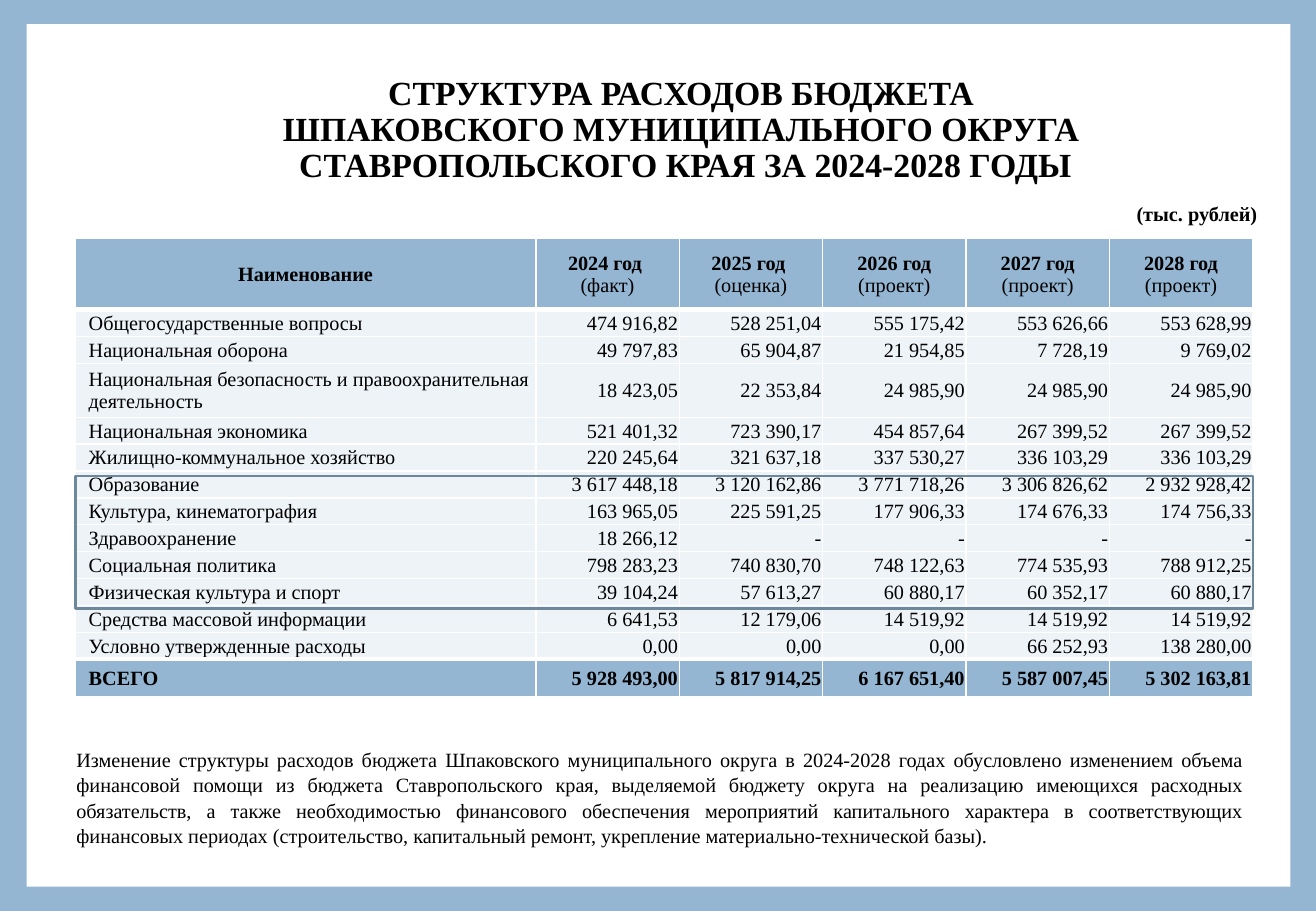
from lxml import etree
from pptx import Presentation
from pptx.dml.color import RGBColor
from pptx.enum.shapes import MSO_SHAPE
from pptx.enum.text import MSO_ANCHOR, PP_ALIGN
from pptx.oxml.ns import qn
from pptx.util import Inches, Pt

RECT = MSO_SHAPE.RECTANGLE
MIDDLE, TOP = MSO_ANCHOR.MIDDLE, MSO_ANCHOR.TOP
LEFT, CENTER, RIGHT, JUST = (PP_ALIGN.LEFT, PP_ALIGN.CENTER,
                             PP_ALIGN.RIGHT, PP_ALIGN.JUSTIFY)

# Content
TITLE = ["СТРУКТУРА РАСХОДОВ БЮДЖЕТА ",
         "ШПАКОВСКОГО МУНИЦИПАЛЬНОГО ОКРУГА ",
         "СТАВРОПОЛЬСКОГО КРАЯ ЗА 2024-2028 ГОДЫ"]
UNITS = "(тыс. рублей)"
HEAD = ["Наименование", "2024 год \n(факт)", "2025 год \n(оценка)",
        "2026 год\n(проект)", "2027 год\n(проект)", "2028 год\n(проект)"]
BODY = [
    ("Общегосударственные вопросы", "474 916,82", "528 251,04",
     "555 175,42", "553 626,66", "553 628,99"),
    ("Национальная оборона", "49 797,83", "65 904,87",
     "21 954,85", "7 728,19", "9 769,02"),
    ("Национальная безопасность и правоохранительная деятельность",
     "18 423,05", "22 353,84", "24 985,90", "24 985,90", "24 985,90"),
    ("Национальная экономика", "521 401,32", "723 390,17",
     "454 857,64", "267 399,52", "267 399,52"),
    ("Жилищно-коммунальное хозяйство", "220 245,64", "321 637,18",
     "337 530,27", "336 103,29", "336 103,29"),
    ("Образование", "3 617 448,18", "3 120 162,86",
     "3 771 718,26", "3 306 826,62", "2 932 928,42"),
    ("Культура, кинематография", "163 965,05", "225 591,25",
     "177 906,33", "174 676,33", "174 756,33"),
    ("Здравоохранение", "18 266,12", "-", "-", "-", "-"),
    ("Социальная политика", "798 283,23", "740 830,70",
     "748 122,63", "774 535,93", "788 912,25"),
    ("Физическая культура и спорт", "39 104,24", "57 613,27",
     "60 880,17", "60 352,17", "60 880,17"),
    ("Средства массовой информации", "6 641,53", "12 179,06",
     "14 519,92", "14 519,92", "14 519,92"),
    ("Условно утвержденные расходы", "0,00", "0,00",
     "0,00", "66 252,93", "138 280,00"),
]
TOTAL = ("ВСЕГО", "5 928 493,00", "5 817 914,25",
         "6 167 651,40", "5 587 007,45", "5 302 163,81")
NOTE = ("Изменение структуры расходов бюджета Шпаковского муниципального "
        "округа в 2024-2028 годах обусловлено изменением объема финансовой "
        "помощи из бюджета Ставропольского края, выделяемой бюджету округа "
        "на реализацию имеющихся расходных обязательств, а также "
        "необходимостью финансового обеспечения мероприятий капитального "
        "характера в соответствующих финансовых периодах (строительство, "
        "капитальный ремонт, укрепление материально-технической базы).")

# Style and layout
FONT = "Times New Roman"
COLORS = {"blue": "94B6D2", "pale": "EEF3F7", "white": "FFFFFF",
          "black": "000000", "frame": "6D879B"}
LONG = 2  # body row that takes two lines
X, Y, WIDTH, HEIGHT = 0.62, 1.96, 9.69, 3.78
HEAD_H, TOTAL_H, YEAR_W = 0.59, 0.31, 1.18
LINE_H = (HEIGHT - HEAD_H - TOTAL_H) / (len(BODY) + 1)


def rgb(name):
    return RGBColor.from_string(COLORS[name])


def write(frame, lines, size, align, bolds, spacing=None):
    frame.text = "\n".join(lines)
    for para, bold in zip(frame.paragraphs, bolds):
        para.alignment = align
        if spacing:
            para.line_spacing = spacing
        font = para.font
        font.name, font.size, font.bold = FONT, Pt(size), bold
        font.color.rgb = rgb("black")


def add_text(box, lines, size, align, bold, anchor, spacing=None):
    frame = slide.shapes.add_textbox(*map(Inches, box)).text_frame
    frame.word_wrap = True
    frame.vertical_anchor = anchor
    write(frame, lines, size, align, [bold] * len(lines), spacing)


def add_rect(box, fill=None, line=None):
    rect = slide.shapes.add_shape(RECT, *map(Inches, box))
    rect.shadow.inherit = False
    if fill:
        rect.fill.solid()
        rect.fill.fore_color.rgb = rgb(fill)
    else:
        rect.fill.background()
    if line:
        rect.line.color.rgb = rgb(line)
        rect.line.width = Pt(1.5)
    else:
        rect.line.fill.background()


def add_borders(cell, top, bottom):
    props = cell._tc.get_or_add_tcPr()
    sides = (("lnL", 1), ("lnR", 1), ("lnT", top), ("lnB", bottom))
    for spot, (tag, width) in enumerate(sides):
        edge = etree.Element(qn("a:" + tag), w=str(Pt(width)))
        fill = etree.SubElement(edge, qn("a:solidFill"))
        etree.SubElement(fill, qn("a:srgbClr"), val=COLORS["white"])
        props.insert(spot, edge)


prs = Presentation()
prs.slide_width, prs.slide_height = Inches(10.83), Inches(7.5)
slide = prs.slides.add_slide(prs.slide_layouts[6])

# Backdrop and headings
slide.background.fill.solid()
slide.background.fill.fore_color.rgb = rgb("blue")
add_rect((0.22, 0.2, 10.4, 7.1), fill="white")
add_text((0.57, 0.58, 10.14, 0.99), TITLE, 20, CENTER, True, MIDDLE, 0.9)
add_text((9.04, 1.56, 1.62, 0.4), [UNITS], 12, CENTER, True, MIDDLE)

# Table grid
rows = [HEAD, *BODY, TOTAL]
last = len(rows) - 1
table = slide.shapes.add_table(len(rows), len(HEAD), Inches(X), Inches(Y),
                               Inches(WIDTH), Inches(HEIGHT)).table
table.horz_banding = False
years = len(HEAD) - 1
for col, wide in enumerate([WIDTH - years * YEAR_W] + [YEAR_W] * years):
    table.columns[col].width = Inches(wide)
heights = [LINE_H * (2 if i == LONG else 1) for i in range(len(BODY))]
for row, high in enumerate([HEAD_H, *heights, TOTAL_H]):
    table.rows[row].height = Inches(high)

# Table cells
for r, row in enumerate(rows):
    for c, text in enumerate(row):
        cell = table.cell(r, c)
        cell.margin_left = cell.margin_right = cell.margin_top = Inches(0.01)
        cell.margin_bottom = 0
        cell.vertical_anchor = MIDDLE
        cell.fill.solid()
        cell.fill.fore_color.rgb = rgb("blue" if r in (0, last) else "pale")
        align = CENTER if r == 0 else RIGHT if c else LEFT
        write(cell.text_frame, text.split("\n"), 12, align,
              (r in (0, last), False))
        if r and not c:
            para = cell.text_frame.paragraphs[0]
            para._p.get_or_add_pPr().set("marL", str(Inches(0.1)))
        add_borders(cell, 3 if r in (1, last) else 1,
                    3 if r in (0, last - 1) else 1)

# Closing note and highlight frame
add_text((0.53, 6.09, 9.81, 0.91), [NOTE], 12, JUST, False, TOP, 1.05)
add_rect((X, 3.92, WIDTH, 1.09), line="frame")

prs.save("out.pptx")
